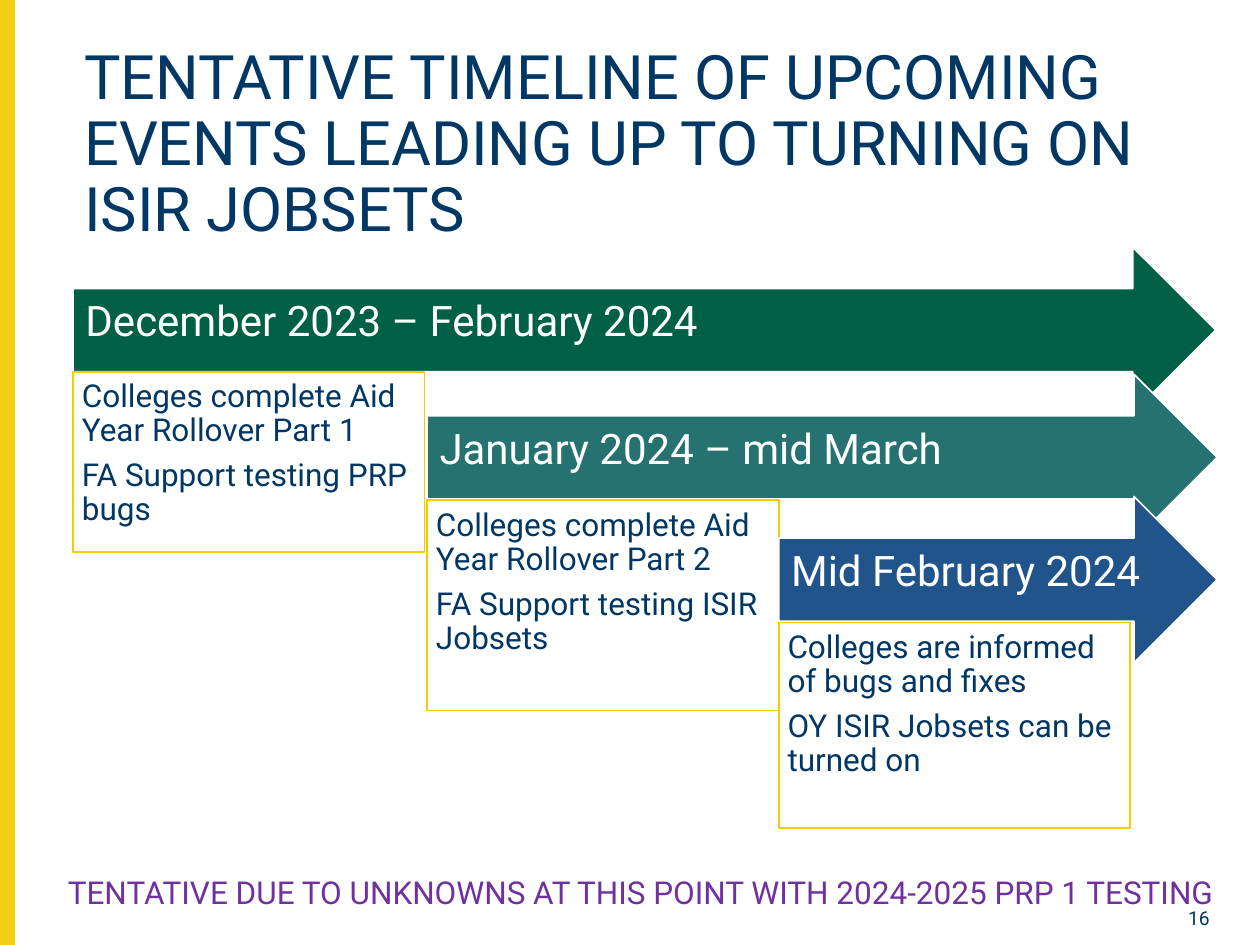
import pptx
import pptx.util
import pptx.dml.color
import pptx.enum.shapes
import pptx.enum.text

Inches, Pt = pptx.util.Inches, pptx.util.Pt
SHAPES = pptx.enum.shapes.MSO_SHAPE
ALIGN = pptx.enum.text.PP_ALIGN
ANCHOR = pptx.enum.text.MSO_ANCHOR

COLORS = {
    "navy": "003764", "gold": "F4CE12", "border": "F4CD00", "white": "FFFFFF",
    "green": "006046", "teal": "267270", "blue": "20548A", "purple": "7030A0",
}


def add_block(kind, left, top, width, height, fill, line):
    block = slide.shapes.add_shape(
        kind, Inches(left), Inches(top), Inches(width), Inches(height))
    block.shadow.inherit = False
    block.fill.solid()
    block.fill.fore_color.rgb = pptx.dml.color.RGBColor.from_string(COLORS[fill])
    block.line.color.rgb = pptx.dml.color.RGBColor.from_string(COLORS[line])
    block.line.width = Pt(1)
    return block


def write(shape, lines, size, color, insets=(0.1, 0.05, 0.1, 0.05),
          anchor=ANCHOR.TOP, align=ALIGN.LEFT, spacing=1.0, after=0):
    frame = shape.text_frame
    frame.word_wrap = True
    frame.vertical_anchor = anchor
    (frame.margin_left, frame.margin_top,
     frame.margin_right, frame.margin_bottom) = map(Inches, insets)
    frame.text = "\n".join(lines)
    for paragraph in frame.paragraphs:
        paragraph.alignment = align
        paragraph.line_spacing = spacing
        paragraph.space_after = Pt(after)
        paragraph.font.name = "Roboto"
        paragraph.font.size = Pt(size)
        paragraph.font.color.rgb = pptx.dml.color.RGBColor.from_string(COLORS[color])


deck = pptx.Presentation()
deck.slide_width, deck.slide_height = Inches(10), Inches(7.5)
slide = deck.slides.add_slide(deck.slide_layouts[6])

# Gold side band
add_block(SHAPES.RECTANGLE, 0, 0, 0.11, 7.5, "gold", "gold")

# Page number and title
page_number = slide.shapes.add_textbox(Inches(9.2), Inches(7.14), Inches(0.5), Inches(0.21))
write(page_number, ["16"], 11, "navy", align=ALIGN.RIGHT)
title = slide.shapes.add_textbox(Inches(0.57), Inches(0.32), Inches(9.08), Inches(0.86))
write(title, ["TENTATIVE TIMELINE OF UPCOMING EVENTS LEADING UP TO TURNING ON ISIR JOBSETS"],
      35, "navy", spacing=0.9)

# Timeline: period, colour, left, arrow top, arrow width, box top, box height, tasks
phases = [
    ("December 2023 – February 2024", "green", 0.58, 1.96, 9.07, 2.95, 1.43,
     ["Colleges complete Aid Year Rollover Part 1", "FA Support testing PRP bugs"]),
    ("January 2024 – mid March", "teal", 3.39, 2.97, 6.27, 3.97, 1.67,
     ["Colleges complete Aid Year Rollover Part 2", "FA Support testing ISIR Jobsets"]),
    ("Mid February 2024", "blue", 6.18, 3.94, 3.48, 4.94, 1.63,
     ["Colleges are informed of bugs and fixes", "OY ISIR Jobsets can be turned on"]),
]
for period, color, left, arrow_top, arrow_width, box_top, box_height, tasks in phases:
    arrow = add_block(SHAPES.RIGHT_ARROW, left, arrow_top, arrow_width, 1.32, color, "white")
    write(arrow, [period], 24, "white", insets=(0.1, 0.1, 0.1, 0.21),
          anchor=ANCHOR.MIDDLE, spacing=0.9)
    task_box = add_block(SHAPES.RECTANGLE, left, box_top, 2.79, box_height, "white", "border")
    write(task_box, tasks, 18, "navy", insets=(0.07,) * 4, spacing=0.9, after=6.3)

# Closing caveat
caveat = slide.shapes.add_textbox(Inches(0.44), Inches(6.88), Inches(9.35), Inches(0.4))
write(caveat, ["TENTATIVE DUE TO UNKNOWNS AT THIS POINT WITH 2024-2025 PRP 1 TESTING"],
      18, "purple")

deck.save("out.pptx")
